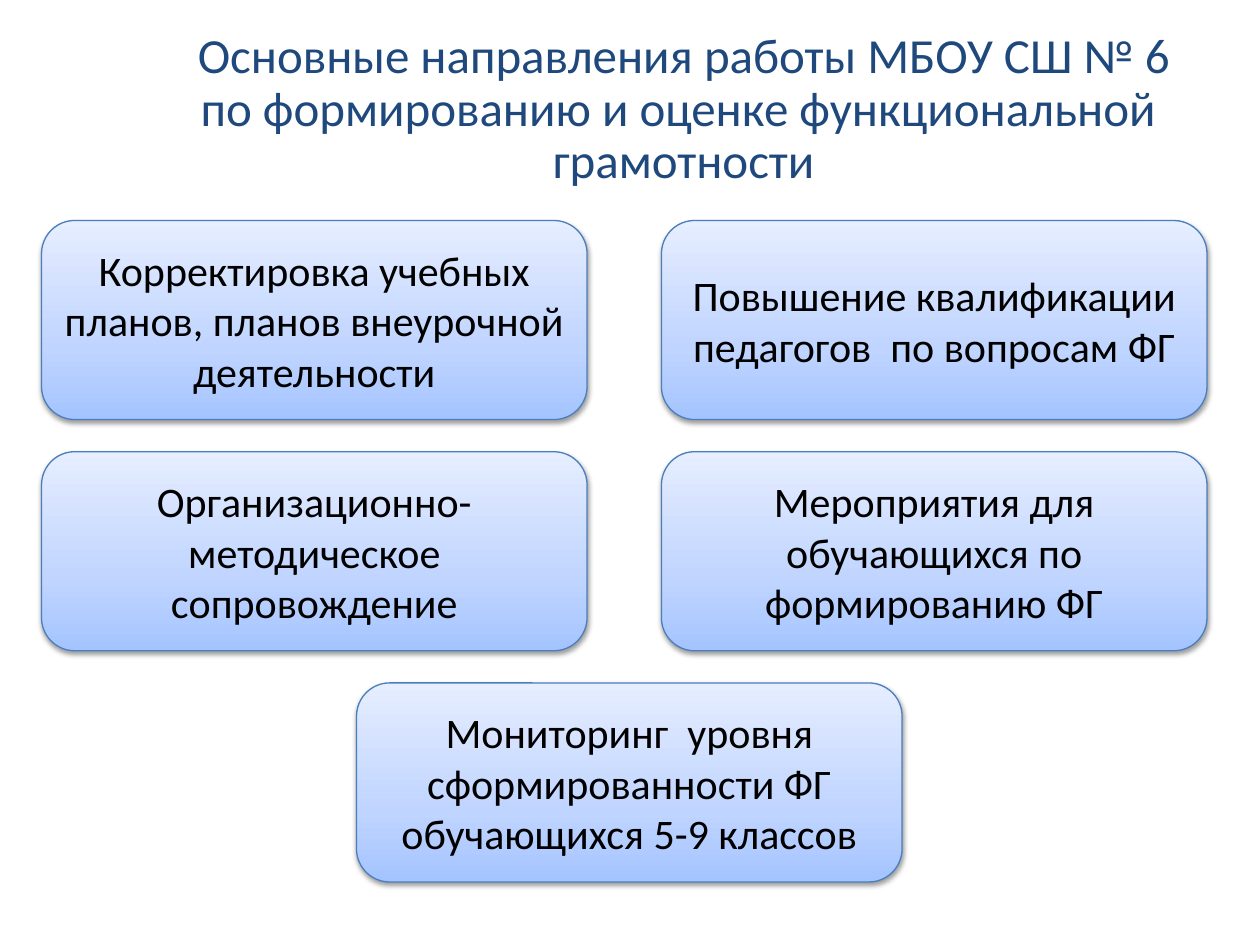
from copy import deepcopy

from lxml import etree
from pptx import Presentation
from pptx.dml.color import RGBColor
from pptx.enum.shapes import MSO_SHAPE
from pptx.enum.text import MSO_ANCHOR, PP_ALIGN
from pptx.oxml.ns import qn
from pptx.util import Inches, Pt

ROUNDED = MSO_SHAPE.ROUNDED_RECTANGLE
CENTER = PP_ALIGN.CENTER
MIDDLE = MSO_ANCHOR.MIDDLE

NAVY = RGBColor(0x1F, 0x49, 0x7D)
BLACK = RGBColor(0, 0, 0)
BORDER = RGBColor(0x4B, 0x7E, 0xBC)
GRADIENT = [
    (0, RGBColor(0xA4, 0xC4, 0xFF)),
    (0.35, RGBColor(0xBF, 0xD4, 0xFF)),
    (1, RGBColor(0xE6, 0xEE, 0xFF)),
]

BOX_W, BOX_H = 4.33, 1.58
LEFT, MID, RIGHT = 0.33, 2.83, 5.25
TOP, ROW_STEP = 1.75, 1.835

TITLE = ("Основные направления работы МБОУ СШ № 6 по формированию "
         "и оценке функциональной  грамотности")
DIRECTIONS = [
    (LEFT, 0, "Корректировка учебных планов, планов внеурочной деятельности"),
    (RIGHT, 0, "Повышение квалификации педагогов  по вопросам ФГ"),
    (LEFT, 1, "Организационно-методическое сопровождение"),
    (RIGHT, 1, "Мероприятия для обучающихся по формированию ФГ"),
    (MID, 2, "Мониторинг  уровня сформированности ФГ обучающихся 5-9 классов"),
]


def write(tf, text, size, color, font="Calibri", spacing=None, before=None):
    tf.word_wrap = True
    p = tf.paragraphs[0]
    p.alignment = CENTER
    p.line_spacing = spacing
    p.space_before = before
    r = p.add_run()
    r.text = text
    r.font.name = font
    r.font.size = Pt(size)
    r.font.color.rgb = color


def fill_gradient(sp):
    """Fill with the blue gradient, running from bottom to top."""
    sp.fill.gradient()
    sp.fill.gradient_angle = 90
    stops = sp._element.spPr.find(qn("a:gradFill")).find(qn("a:gsLst"))
    stops.append(deepcopy(stops[0]))
    for stop, (position, color) in zip(sp.fill.gradient_stops, GRADIENT):
        stop.position = position
        stop.color.rgb = color


def drop_shadow(sp):
    sp.shadow.inherit = False
    effects = sp._element.spPr.find(qn("a:effectLst"))
    shadow = etree.SubElement(effects, qn("a:outerShdw"), blurRad=str(Pt(3.1)),
                              dist=str(Pt(1.6)), dir="5400000", rotWithShape="0")
    color = etree.SubElement(shadow, qn("a:srgbClr"), val=str(BLACK))
    etree.SubElement(color, qn("a:alpha"), val="38000")


class Deck:
    def __init__(self, prs):
        self.slide = prs.slides.add_slide(prs.slide_layouts[6])

    def title(self, text, x, y, w, h):
        sp = self.slide.shapes.add_textbox(Inches(x), Inches(y), Inches(w), Inches(h))
        tf = sp.text_frame
        tf.margin_top = Inches(0.07)
        write(tf, text, 28, NAVY, spacing=Pt(30.2), before=Pt(4.8))

    def box(self, text, x, y):
        sp = self.slide.shapes.add_shape(
            ROUNDED, Inches(x), Inches(y), Inches(BOX_W), Inches(BOX_H))
        fill_gradient(sp)
        sp.line.color.rgb = BORDER
        sp.line.width = Pt(0.75)
        drop_shadow(sp)
        sp.text_frame.vertical_anchor = MIDDLE
        write(sp.text_frame, text, 24, BLACK)


def main():
    prs = Presentation()
    prs.slide_width, prs.slide_height = Inches(10), Inches(7.5)
    deck = Deck(prs)
    deck.title(TITLE, 1.33, 0.17, 8.19, 1.33)
    for x, row, text in DIRECTIONS:
        deck.box(text, x, TOP + row * ROW_STEP)
    prs.save("out.pptx")


if __name__ == "__main__":
    main()
